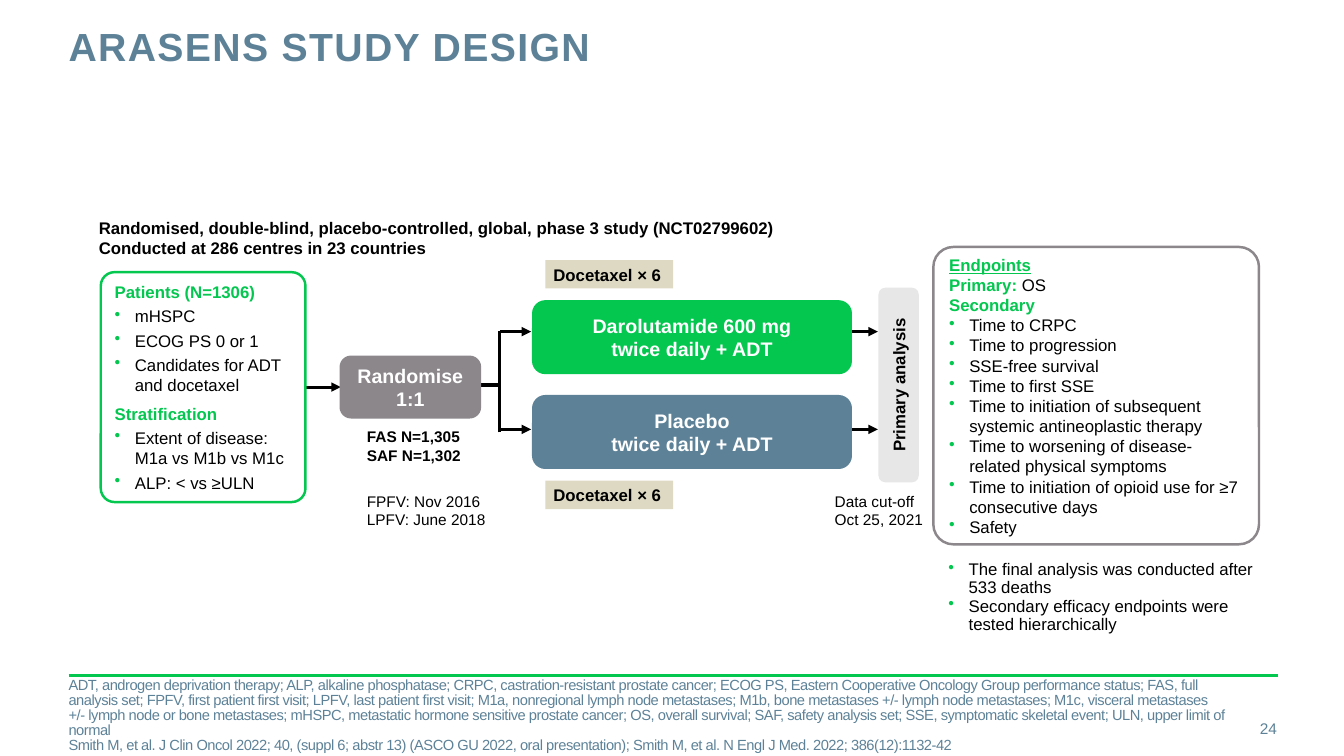
"""Build the ARASENS study design slide."""
from lxml.etree import SubElement
from pptx import Presentation
from pptx.dml.color import RGBColor
from pptx.enum.shapes import MSO_CONNECTOR as Wire, MSO_SHAPE as Form
from pptx.enum.text import MSO_ANCHOR as Anchor, PP_ALIGN as Align
from pptx.oxml.ns import qn
from pptx.util import Pt

rgb = RGBColor.from_string
GREEN, BLUE, GREY = "03C74F", "5D8298", "8B878B"
BLACK, WHITE, PALE, SAND = "000000", "FFFFFF", "E8E7E8", "DDD9C3"
FLUSH = (0, 0, 0, 0)

deck = Presentation()
deck.slide_width, deck.slide_height = Pt(960), Pt(540)
slide = deck.slides.add_slide(deck.slide_layouts[5])
shapes = slide.shapes


def box(spot, paras, size=12, fill=None, line=None, adj=0, pad=(7.2, 3.6, 7.2, 3.6),
        anchor=Anchor.MIDDLE, align=Align.LEFT, gap=0, pitch=1, track=0):
    """Add a text box or filled shape; a plain string is a bulleted item."""
    place = [Pt(v) for v in spot]
    if fill:
        form = Form.ROUNDED_RECTANGLE if adj else Form.RECTANGLE
        item = shapes.add_shape(form, *place)
        item.shadow.inherit = False
        item.fill.solid()
        item.fill.fore_color.rgb = rgb(fill)
        if adj:
            item.adjustments[0] = adj
        if line:
            item.line.color.rgb = rgb(line)
            item.line.width = Pt(1.75)
        else:
            item.line.fill.background()
    else:
        item = shapes.add_textbox(*place)
    frame = item.text_frame
    frame.word_wrap = True
    frame.vertical_anchor = anchor
    frame.margin_left, frame.margin_top, frame.margin_right, frame.margin_bottom = map(Pt, pad)
    for i, runs in enumerate(paras):
        para = frame.paragraphs[0] if i == 0 else frame.add_paragraph()
        para.alignment = align
        para.space_after = Pt(gap)
        para.line_spacing = pitch
        if isinstance(runs, str):
            props = para._p.get_or_add_pPr()
            props.set("marL", str(Pt(14.4)))
            props.set("indent", str(-Pt(14.4)))
            tint = SubElement(props, qn("a:buClr"))
            SubElement(tint, qn("a:srgbClr"), val=GREEN)
            SubElement(props, qn("a:buChar"), char="•")
            runs = [(runs, BLACK, False)]
        for text, hue, bold in runs:
            for j, part in enumerate(text.split("\n")):
                if j:
                    para.add_line_break()
                run = para.add_run()
                run.text = part
                font = run.font
                font.name, font.size, font.bold = "Arial", Pt(size), bold
                font.color.rgb = rgb(hue)
                if track:
                    run._r.get_or_add_rPr().set("spc", str(track))
    return item


def link(x1, y1, x2, y2, hue=BLACK, width=2.25, tip=True):
    """Add a straight line, with an arrowhead at its end if tip is set."""
    wire = shapes.add_connector(Wire.STRAIGHT, Pt(x1), Pt(y1), Pt(x2), Pt(y2))
    wire.line.color.rgb = rgb(hue)
    wire.line.width = Pt(width)
    if tip:
        SubElement(wire.line._get_or_add_ln(), qn("a:tailEnd"), type="triangle")
    SubElement(wire._element.spPr, qn("a:effectLst"))


title = shapes.title
title.left, title.top, title.width, title.height = Pt(49), Pt(19.4), Pt(688.3), Pt(63.4)
frame = title.text_frame
frame.margin_left = frame.margin_top = frame.margin_right = frame.margin_bottom = 0
frame.vertical_anchor = Anchor.TOP
frame.word_wrap = True
para = frame.paragraphs[0]
para.alignment = Align.LEFT
para.line_spacing = Pt(30)
run = para.add_run()
run.text = "ARASENS STUDY DESIGN"
run.font.name, run.font.size, run.font.bold = "Arial", Pt(28), True
run.font.color.rgb = rgb(BLUE)
run._r.get_or_add_rPr().set("spc", "100")

link(49, 482.4, 913, 482.4, GREEN, 2, False)
box((850.3, 506.2, 61.9, 28.8), [[("24", BLUE, False)]], 11, pad=FLUSH, align=Align.RIGHT)
notes = [
    "ADT, androgen deprivation therapy; ALP, alkaline phosphatase; CRPC, castration-resistant "
    "prostate cancer; ECOG PS, Eastern Cooperative Oncology Group performance status; FAS, full "
    "analysis set; FPFV, first patient first visit; LPFV, last patient first visit; M1a, "
    "nonregional lymph node metastases; M1b, bone metastases +/- lymph node metastases; M1c, "
    "visceral metastases +/- lymph node or bone metastases; mHSPC, metastatic hormone sensitive "
    "prostate cancer; OS, overall survival; SAF, safety analysis set; SSE, symptomatic skeletal "
    "event; ULN, upper limit of normal",
    "Smith M, et al. J Clin Oncol 2022; 40, (suppl 6; abstr 13) (ASCO GU 2022, oral "
    "presentation); Smith M, et al. N Engl J Med. 2022; 386(12):1132-42",
]
box((49, 496.8, 828, 29.5), [[(note, BLUE, False)] for note in notes], 10.5,
    pad=FLUSH, pitch=0.85, track=-30)

heads = ["Randomised, double-blind, placebo-controlled, global, phase 3 study (NCT02799602)",
         "Conducted at 286 centres in 23 countries"]
box((70.6, 155.5, 568.8, 28.8), [[(head, BLACK, True)] for head in heads],
    pad=FLUSH, anchor=Anchor.TOP)

for x, y, wide, text, bold in [
    (262, 305.3, 68.4, "FAS N=1,305\nSAF N=1,302", True),
    (262, 351.4, 171.4, "FPFV: Nov 2016\nLPFV: June 2018", False),
    (596.2, 351.4, 67.7, "Data cut-off\nOct 25, 2021", False),
]:
    box((x, y, wide, 26.6), [[(text, BLACK, bold)]], 11, pad=FLUSH, anchor=Anchor.TOP)

link(208, 276.5, 243.4, 276.5)
link(312.5, 275, 357.1, 275, tip=False)
link(357.1, 308.9, 357.1, 236.2, tip=False)
for y in (236.9, 306.7):
    link(357.1, y, 379.4, y)
    link(604.8, y, 627.1, y)

box((72, 194.4, 146.2, 164.2), [
    [("Patients (N=1306)", GREEN, True)],
    "mHSPC",
    "ECOG PS 0 or 1",
    "Candidates for ADT\nand docetaxel",
    [("Stratification", GREEN, True)],
    "Extent of disease:\nM1a vs M1b vs M1c",
    "ALP: < vs ≥ULN",
], fill=WHITE, line=GREEN, adj=0.067, gap=3).text_frame.paragraphs[4].space_before = Pt(3)

for spot, text, hue in [
    ((243.4, 254.9, 99.4, 43.2), "Randomise\n1:1", GREY),
    ((380.9, 215.3, 226.8, 51.1), "Darolutamide 600 mg\ntwice daily + ADT", GREEN),
    ((380.9, 283, 226.8, 51.1), "Placebo\ntwice daily + ADT", BLUE),
]:
    box(spot, [[(text, WHITE, True)]], 14, hue, hue, 0.169, align=Align.CENTER, gap=3)

for y in (185.8, 343.4):
    box((389.5, y, 91.4, 20.2), [[("Docetaxel × 6", BLACK, True)]], fill=SAND,
        pad=(5.8, 2.9, 2.9, 2.9))

box((572.4, 260.6, 139, 28.8), [[("Primary analysis", BLACK, True)]], fill=PALE,
    adj=0.169, align=Align.CENTER, gap=3).rotation = 270

ends = box((666.7, 176.4, 232.6, 212.4), [
    [("Endpoints", GREEN, True)],
    [("Primary: ", GREEN, True), ("OS", BLACK, False)],
    [("Secondary", GREEN, True)],
    "Time to CRPC",
    "Time to progression",
    "SSE-free survival",
    "Time to first SSE",
    "Time to initiation of subsequent systemic antineoplastic therapy",
    "Time to worsening of disease-related physical symptoms",
    "Time to initiation of opioid use for ≥7 consecutive days",
    "Safety",
], fill=WHITE, line=GREY, adj=0.067)
ends.text_frame.paragraphs[0].runs[0].font.underline = True

box((677.5, 397.4, 232.6, 64.1), [
    "The final analysis was conducted after 533 deaths",
    "Secondary efficacy endpoints were\ntested hierarchically",
], pad=(0, 3.6, 0, 3.6), anchor=Anchor.TOP, pitch=0.9)

deck.save("out.pptx")
